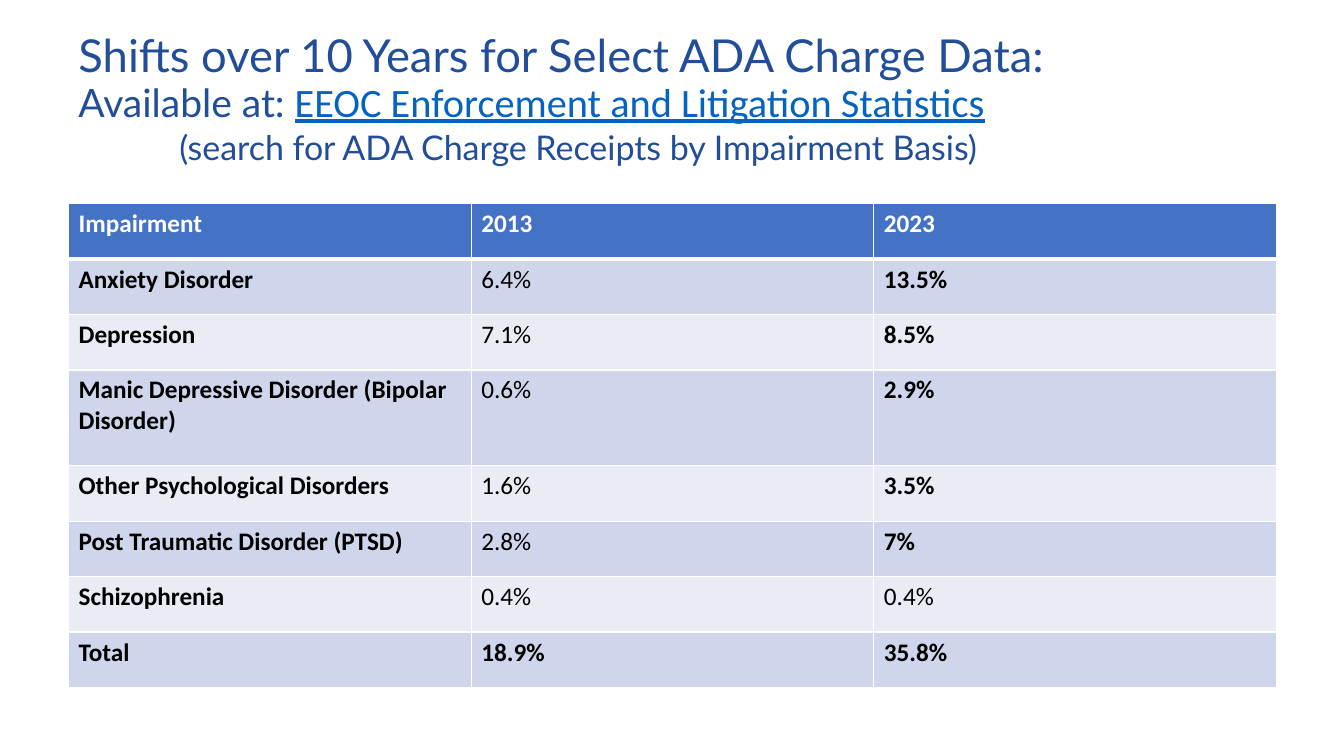
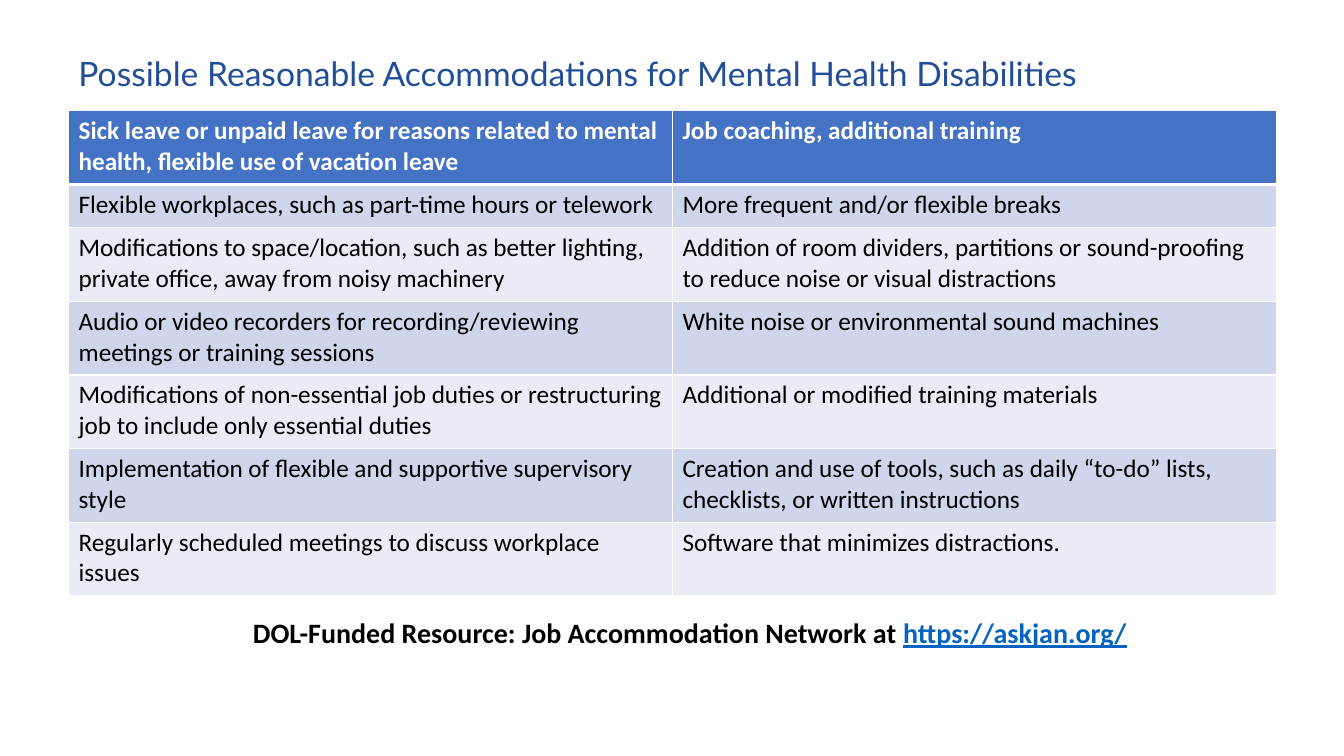
from lxml.etree import SubElement
from pptx import Presentation
from pptx.dml.color import RGBColor
from pptx.enum.text import MSO_ANCHOR
from pptx.oxml.ns import qn
from pptx.util import Inches, Pt

# Shared look
TITLE_BLUE = "224E99"
LINK_BLUE = "0563C1"
HEADER_BLUE = "4472C4"
BAND_FILLS = ("CFD5EA", "E9EBF5")
WHITE = "FFFFFF"
BLACK = "000000"
TITLE_FONT = "Lato"
BODY_FONT = "Calibri"
LEFT, WIDTH, TITLE_TOP = 0.68, 11.98, 0.4

CHARGES = [
    ("Impairment", "2013", "2023"),
    ("Anxiety Disorder", "6.4%", "13.5%"),
    ("Depression", "7.1%", "8.5%"),
    ("Manic Depressive Disorder (Bipolar Disorder)", "0.6%", "2.9%"),
    ("Other Psychological Disorders", "1.6%", "3.5%"),
    ("Post Traumatic Disorder (PTSD)", "2.8%", "7%"),
    ("Schizophrenia", "0.4%", "0.4%"),
    ("Total", "18.9%", "35.8%"),
]

ACCOMMODATIONS = [
    ("Sick leave or unpaid leave for reasons related to mental health, "
     "flexible use of vacation leave",
     "Job coaching, additional training"),
    ("Flexible workplaces, such as part-time hours or telework",
     "More frequent and/or flexible breaks"),
    ("Modifications to space/location, such as better lighting, "
     "private office, away from noisy machinery",
     "Addition of room dividers, partitions or sound-proofing "
     "to reduce noise or visual distractions"),
    ("Audio or video recorders for recording/reviewing meetings or training sessions",
     "White noise or environmental sound machines"),
    ("Modifications of non-essential job duties or restructuring job "
     "to include only essential duties",
     "Additional or modified training materials"),
    ("Implementation of flexible and supportive supervisory style",
     "Creation and use of tools, such as daily “to-do” lists, "
     "checklists, or written instructions"),
    ("Regularly scheduled meetings to discuss workplace issues",
     "Software that minimizes distractions."),
]


def color(hex_string):
    return RGBColor.from_string(hex_string)


def format_run(run, size, hex_string, name=BODY_FONT, bold=False, underline=False):
    font = run.font
    font.size = Pt(size)
    font.name = name
    font.bold = bold
    font.underline = underline
    font.color.rgb = color(hex_string)


def add_run(paragraph, text, *style, **options):
    run = paragraph.add_run()
    run.text = text
    format_run(run, *style, **options)


def add_text_box(slide, left, top, width, height):
    box = slide.shapes.add_textbox(
        Inches(left), Inches(top), Inches(width), Inches(height))
    box.text_frame.word_wrap = True
    return box.text_frame


def add_title(slide, height, text, size):
    """Place the title and return its frame for further lines."""
    frame = add_text_box(slide, LEFT, TITLE_TOP, WIDTH, height)
    frame.vertical_anchor = MSO_ANCHOR.MIDDLE
    paragraph = frame.paragraphs[0]
    paragraph.line_spacing = 0.9
    add_run(paragraph, text, size, TITLE_BLUE, TITLE_FONT)
    return frame


def add_title_line(frame):
    paragraph = frame.add_paragraph()
    paragraph.line_spacing = 0.9
    return paragraph


def set_borders(cell, top, bottom):
    properties = cell._tc.get_or_add_tcPr()
    for side, points in (("lnL", 1), ("lnR", 1), ("lnT", top), ("lnB", bottom)):
        line = SubElement(properties, qn(f"a:{side}"), w=str(Pt(points)))
        fill = SubElement(line, qn("a:solidFill"))
        SubElement(fill, qn("a:srgbClr"), val=WHITE)


def add_banded_table(slide, top, rows, heights, is_bold):
    """Equal columns, a blue header row and alternating bands below it."""
    columns = len(rows[0])
    table = slide.shapes.add_table(
        len(rows), columns, Inches(LEFT), Inches(top),
        Inches(WIDTH), Inches(sum(heights))).table
    for column in table.columns:
        column.width = Inches(WIDTH / columns)
    for row_index, (values, height) in enumerate(zip(rows, heights)):
        table.rows[row_index].height = Inches(height)
        header = row_index == 0
        fill = HEADER_BLUE if header else BAND_FILLS[(row_index - 1) % 2]
        for column_index, value in enumerate(values):
            cell = table.cell(row_index, column_index)
            set_borders(cell, 3 if row_index == 1 else 1, 3 if header else 1)
            cell.fill.solid()
            cell.fill.fore_color.rgb = color(fill)
            cell.text_frame.text = value
            format_run(cell.text_frame.paragraphs[0].runs[0], 18,
                       WHITE if header else BLACK,
                       bold=header or is_bold(values, column_index))


def charge_is_bold(values, column):
    """Labels, totals and shares that changed stand out."""
    changed = column == 2 and values[1] != values[2]
    return column == 0 or values[0] == "Total" or changed


def build_charge_slide(slide):
    # Title with source and search hint
    frame = add_title(slide, 1.2, "Shifts over 10 Years for Select ADA Charge Data:", 32.4)
    source = add_title_line(frame)
    add_run(source, "Available at: ", 27.9, TITLE_BLUE, TITLE_FONT)
    add_run(source, "EEOC Enforcement and Litigation Statistics", 28.8,
            LINK_BLUE, underline=True)
    hint = add_title_line(frame)
    hint.space_before = Pt(4)
    hint._p.get_or_add_pPr().set("marL", str(Inches(1)))
    add_run(hint, "(search for ADA Charge Receipts by Impairment Basis)", 24.3,
            TITLE_BLUE, TITLE_FONT)

    # Charge shares
    heights = [0.95 if "Bipolar" in row[0] else 0.55 for row in CHARGES]
    add_banded_table(slide, 2.02, CHARGES, heights, charge_is_bold)


def build_accommodation_slide(slide):
    add_title(slide, 0.7,
              "Possible Reasonable Accommodations for Mental Health Disabilities", 24)

    # Only the second row fits on one line
    heights = [0.43 if index == 1 else 0.73 for index in range(len(ACCOMMODATIONS))]
    add_banded_table(slide, 1.1, ACCOMMODATIONS, heights, lambda values, column: False)

    # Resource line
    paragraph = add_text_box(slide, 2.41, 6.06, 9.12, 0.44).paragraphs[0]
    add_run(paragraph, "DOL-Funded Resource: Job Accommodation Network at ", 20,
            BLACK, bold=True)
    add_run(paragraph, "https://askjan.org/", 20, LINK_BLUE, bold=True, underline=True)


def main():
    presentation = Presentation()
    presentation.slide_width = Inches(13.33)
    presentation.slide_height = Inches(7.5)
    for build in (build_charge_slide, build_accommodation_slide):
        build(presentation.slides.add_slide(presentation.slide_layouts[6]))
    presentation.save("out.pptx")


if __name__ == "__main__":
    main()
